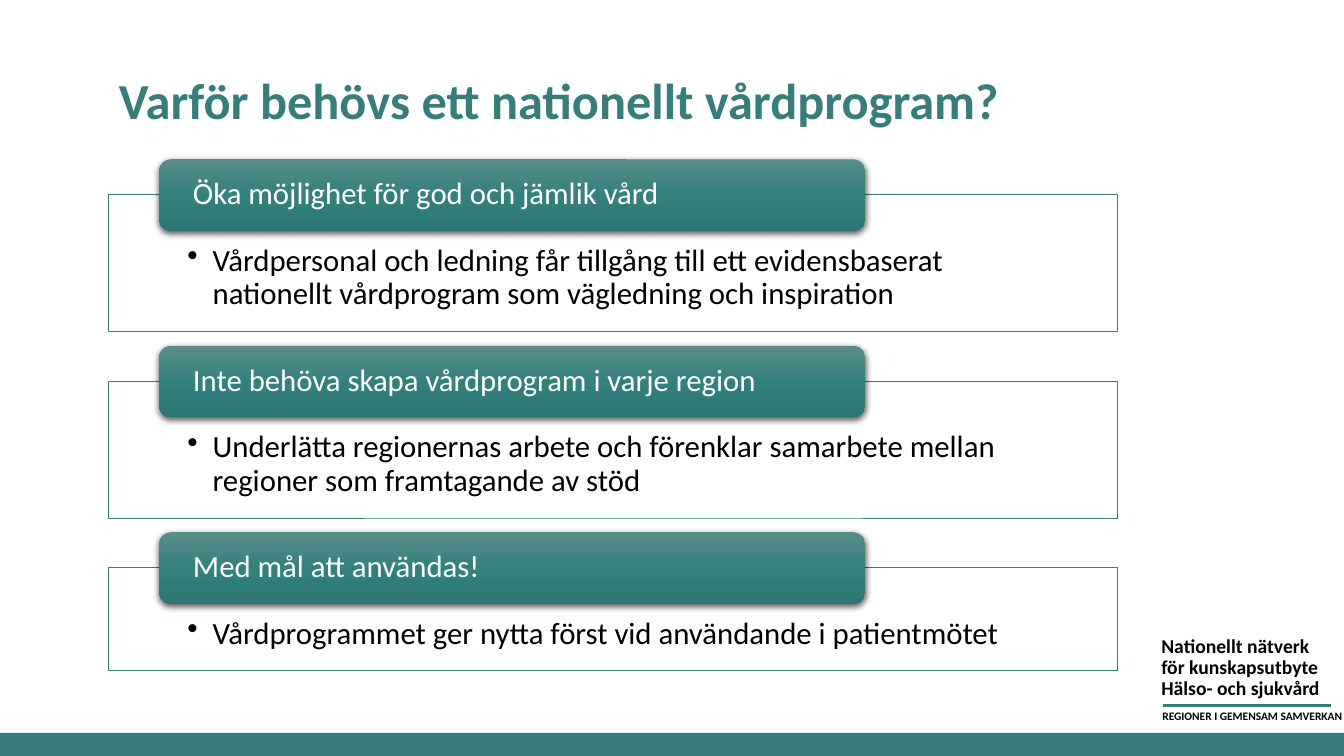
from dataclasses import dataclass

from lxml import etree
from pptx import Presentation
from pptx import util as u
from pptx.dml.color import RGBColor
from pptx.enum import shapes, text
from pptx.oxml.ns import qn
from pptx.shapes.autoshape import Shape
from pptx.slide import Slide
from pptx.text.text import TextFrame

PX = 9144  # EMU per px, 100 px to the inch


@dataclass(frozen=True)
class Theme:
    font: str = "Calibri"
    teal: str = "377D7A"
    white: str = "FFFFFF"
    black: str = "000000"
    bar_stops: tuple[tuple[int, str], ...] = ((0, "588D8A"), (50, "34807D"), (100, "2B7572"))
    title_size: float = 36
    body_size: float = 22
    sender_size: float = 14
    tagline_size: float = 8.2


@dataclass(frozen=True)
class Box:
    left: int
    top: int
    width: int
    height: int

    def emu(self) -> tuple[int, int, int, int]:
        return (self.left * PX, self.top * PX, self.width * PX, self.height * PX)


@dataclass(frozen=True)
class Reason:
    heading: str
    detail: str
    frame_height: int


THEME = Theme()
PAGE_WIDTH, PAGE_HEIGHT, FOOTER_HEIGHT = 1333, 750, 23
FIRST_BAR_TOP, REASON_PITCH = 158, 185
BAR_HEIGHT, FRAME_DROP = 71, 35
REASONS = [
    Reason("Öka möjlighet för god och jämlik vård",
           "Vårdpersonal och ledning får tillgång till ett evidensbaserat "
           "nationellt vårdprogram som vägledning och inspiration", 136),
    Reason("Inte behöva skapa vårdprogram i varje region",
           "Underlätta regionernas arbete och förenklar samarbete mellan "
           "regioner som framtagande av stöd", 136),
    Reason("Med mål att användas!",
           "Vårdprogrammet ger nytta först vid användande i patientmötet", 102),
]
SENDER = ["Nationellt nätverk", "för kunskapsutbyte", "Hälso- och sjukvård"]
TAGLINE = "REGIONER I GEMENSAM SAMVERKAN"


def write(frame: TextFrame, lines: list[str], size: float, color: str, bold: bool = False,
          spacing: float | u.Length = 1.0) -> None:
    for index, line in enumerate(lines):
        para = frame.paragraphs[0] if index == 0 else frame.add_paragraph()
        para.alignment = text.PP_ALIGN.LEFT
        para.line_spacing = spacing
        span = para.add_run()
        span.text = line
        span.font.name = THEME.font
        span.font.size = u.Pt(size)
        span.font.bold = bold
        span.font.color.rgb = RGBColor.from_string(color)


def add_text(page: Slide, box: Box, wrap: bool = False) -> TextFrame:
    frame = page.shapes.add_textbox(*box.emu()).text_frame
    frame.word_wrap = wrap
    return frame


def add_block(page: Slide, kind: shapes.MSO_SHAPE, box: Box, fill: str) -> Shape:
    """Add a flat filled shape with no outline."""
    block = page.shapes.add_shape(kind, *box.emu())
    block.shadow.inherit = False
    block.fill.solid()
    block.fill.fore_color.rgb = RGBColor.from_string(fill)
    block.line.fill.background()
    return block


def set_insets(frame: TextFrame, side: int, top: int, bottom: int) -> None:
    frame.word_wrap = True
    frame.margin_left = frame.margin_right = side * PX
    frame.margin_top, frame.margin_bottom = top * PX, bottom * PX


def add_color(parent: etree._Element, color: str, alpha: int = 100) -> None:
    node = etree.SubElement(parent, qn("a:srgbClr"), val=color)
    if alpha < 100:
        etree.SubElement(node, qn("a:alpha"), val=str(alpha * 1000))


def add_frame(page: Slide, box: Box, detail: str) -> None:
    block = add_block(page, shapes.MSO_SHAPE.RECTANGLE, box, THEME.white)
    fill = block._element.spPr.find(qn("a:solidFill"))
    fill.remove(fill[0])
    add_color(fill, THEME.white, 90)
    block.line.color.rgb = RGBColor.from_string(THEME.teal)
    block.line.width = u.Pt(0.5)
    frame = block.text_frame
    set_insets(frame, 78, 50, 17)
    frame.vertical_anchor = text.MSO_ANCHOR.TOP
    write(frame, [detail], THEME.body_size, THEME.black, spacing=0.9)
    props = frame.paragraphs[0]._p.get_or_add_pPr()
    props.set("marL", str(25 * PX))
    props.set("indent", str(-25 * PX))
    etree.SubElement(props, qn("a:buChar"), char="•")


def add_bar(page: Slide, box: Box, heading: str) -> None:
    bar = add_block(page, shapes.MSO_SHAPE.ROUNDED_RECTANGLE, box, THEME.teal)
    bar.fill.gradient()
    bar.fill.gradient_angle = 270
    properties = bar._element.spPr
    stops = properties.find(qn("a:gradFill")).find(qn("a:gsLst"))
    for old in list(stops):
        stops.remove(old)
    for percent, color in THEME.bar_stops:
        add_color(etree.SubElement(stops, qn("a:gs"), pos=str(percent * 1000)), color)
    shadow = etree.SubElement(
        properties.find(qn("a:effectLst")), qn("a:outerShdw"), blurRad=str(u.Pt(4.5)),
        dist=str(u.Pt(1.5)), dir="5400000", algn="ctr", rotWithShape="0")
    add_color(shadow, THEME.black, 63)
    set_insets(bar.text_frame, 30, 0, 0)
    bar.text_frame.vertical_anchor = text.MSO_ANCHOR.MIDDLE
    write(bar.text_frame, [heading], THEME.body_size, THEME.white, spacing=0.9)


def add_sender(page: Slide) -> None:
    write(add_text(page, Box(1142, 627, 243, 73)), SENDER, THEME.sender_size,
          THEME.black, bold=True, spacing=u.Pt(14.8))
    rule = page.shapes.add_connector(
        shapes.MSO_CONNECTOR.STRAIGHT, 1153 * PX, 700 * PX, 1320 * PX, 700 * PX)
    rule.line.color.rgb = RGBColor.from_string(THEME.teal)
    rule.line.width = u.Pt(2.5)
    etree.SubElement(rule._element.spPr, qn("a:effectLst"))
    write(add_text(page, Box(1143, 699, 219, 24)), [TAGLINE], THEME.tagline_size,
          THEME.black, bold=True)


def main() -> None:
    deck = Presentation()
    deck.slide_width, deck.slide_height = PAGE_WIDTH * PX, PAGE_HEIGHT * PX
    page = deck.slides.add_slide(deck.slide_layouts[6])
    footer = Box(0, PAGE_HEIGHT - FOOTER_HEIGHT, PAGE_WIDTH, FOOTER_HEIGHT)
    add_block(page, shapes.MSO_SHAPE.RECTANGLE, footer, THEME.teal)
    add_sender(page)
    title = add_text(page, Box(108, 67, 1000, 67), wrap=True)
    title.vertical_anchor = text.MSO_ANCHOR.BOTTOM
    write(title, ["Varför behövs ett nationellt vårdprogram?"], THEME.title_size,
          THEME.teal, bold=True, spacing=0.9)
    for index, reason in enumerate(REASONS):
        top = FIRST_BAR_TOP + index * REASON_PITCH
        add_frame(page, Box(108, top + FRAME_DROP, 1000, reason.frame_height), reason.detail)
        add_bar(page, Box(158, top, 700, BAR_HEIGHT), reason.heading)
    deck.save("out.pptx")


if __name__ == "__main__":
    main()
